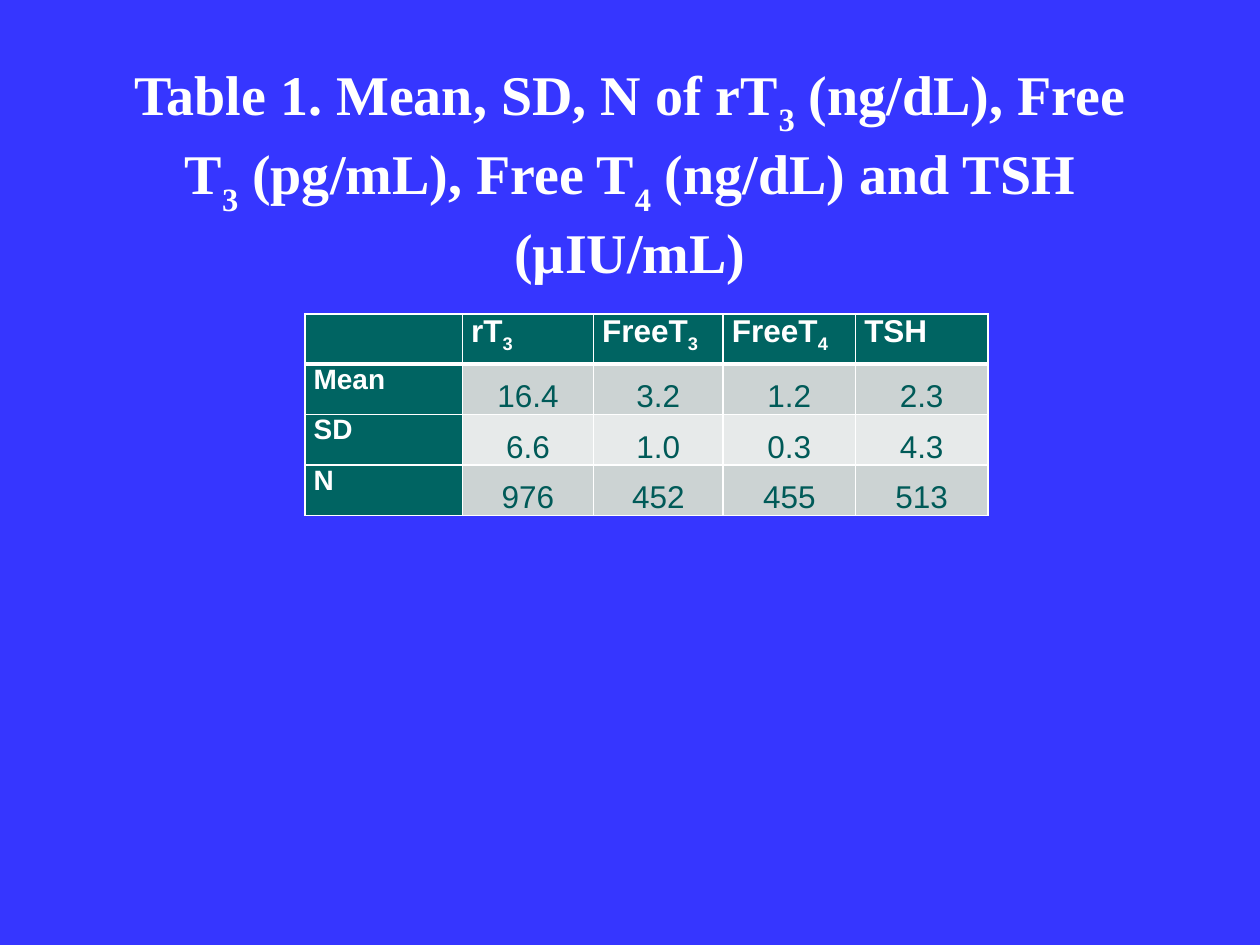
"""Build a slide with a titled summary table of thyroid hormone levels."""
from lxml import etree
from pptx import Presentation
from pptx.dml.color import RGBColor
from pptx.enum.text import MSO_ANCHOR, PP_ALIGN
from pptx.oxml.ns import qn
from pptx.util import Inches, Pt

CENTER, LEFT = PP_ALIGN.CENTER, PP_ALIGN.LEFT
TOP, MIDDLE, BOTTOM = MSO_ANCHOR.TOP, MSO_ANCHOR.MIDDLE, MSO_ANCHOR.BOTTOM

COLORS = {
    "background": "3636FF",
    "white": "FFFFFF",
    "header": "006462",
    "value": "005A58",
    "odd_row": "CCD3D3",
    "even_row": "E7EAEA",
}
TITLE = [
    ("Table 1. Mean, SD, N of rT", 0), ("3", -30),
    (" (ng/dL), Free T", 0), ("3", -30),
    (" (pg/mL), Free T", 0), ("4", -30),
    (" (ng/dL) and TSH (µIU/mL)", 0),
]
HEADERS = [
    [],
    [("rT", 0), ("3", -25)],
    [("FreeT", 0), ("3", -25)],
    [("FreeT", 0), ("4", -25)],
    [("TSH", 0)],
]
STATISTICS = [
    ("Mean", "16.4", "3.2", "1.2", "2.3"),
    ("SD", "6.6", "1.0", "0.3", "4.3"),
    ("N", "976", "452", "455", "513"),
]
COLUMN_WIDTHS = [1.25, 1.04, 1.03, 1.05, 1.05]
ROW_HEIGHT = 0.4


def rgb(name):
    return RGBColor.from_string(COLORS[name])


def add_runs(paragraph, runs, font_name, size, color, bold):
    for text, baseline in runs:
        run = paragraph.add_run()
        run.text = text
        run.font.name = font_name
        run.font.size = Pt(size)
        run.font.bold = bold
        run.font.color.rgb = rgb(color)
        if baseline:
            run.font._element.set("baseline", str(baseline * 1000))


def set_borders(cell, widths):
    properties = cell._tc.get_or_add_tcPr()
    for index, (side, width) in enumerate(zip("LRTB", widths)):
        line = etree.Element(qn(f"a:ln{side}"), w=str(Pt(width)))
        fill = etree.SubElement(line, qn("a:solidFill"))
        etree.SubElement(fill, qn("a:srgbClr"), val=COLORS["white"])
        properties.insert(index, line)


def add_title(slide):
    title = slide.shapes.add_textbox(Inches(0.75), Inches(1.25), Inches(8.5), Inches(1.25))
    frame = title.text_frame
    frame.word_wrap = True
    frame.vertical_anchor = MIDDLE
    frame.margin_bottom = Inches(1.07)
    paragraph = frame.paragraphs[0]
    paragraph.alignment = CENTER
    add_runs(paragraph, TITLE, "Times New Roman", 32, "white", True)


def add_statistics_table(slide):
    rows = [HEADERS] + [[[(text, 0)] for text in row] for row in STATISTICS]
    table = slide.shapes.add_table(
        len(rows), len(COLUMN_WIDTHS), Inches(2.42), Inches(2.49),
        Inches(sum(COLUMN_WIDTHS)), Inches(ROW_HEIGHT * len(rows)),
    ).table
    for column, width in zip(table.columns, COLUMN_WIDTHS):
        column.width = Inches(width)
    for row_index, row in enumerate(rows):
        table.rows[row_index].height = Inches(ROW_HEIGHT)
        for column_index, runs in enumerate(row):
            cell = table.cell(row_index, column_index)
            is_value = row_index > 0 and column_index > 0
            band = "odd_row" if row_index % 2 else "even_row"
            cell.fill.solid()
            cell.fill.fore_color.rgb = rgb(band if is_value else "header")
            cell.margin_left = cell.margin_right = Inches(0.07)
            cell.margin_top = cell.margin_bottom = 0
            cell.vertical_anchor = BOTTOM if is_value else TOP
            set_borders(cell, (1, 1, 3 if row_index == 1 else 1, 3 if row_index == 0 else 1))
            paragraph = cell.text_frame.paragraphs[0]
            paragraph.alignment = CENTER if is_value else LEFT
            size = 16 if row_index > 0 and column_index == 0 else 18
            add_runs(paragraph, runs, "Arial", size, "value" if is_value else "white", not is_value)


def main():
    presentation = Presentation()
    presentation.slide_width = Inches(10)
    presentation.slide_height = Inches(7.5)
    slide = presentation.slides.add_slide(presentation.slide_layouts[6])
    slide.background.fill.solid()
    slide.background.fill.fore_color.rgb = rgb("background")
    add_title(slide)
    add_statistics_table(slide)
    presentation.save("out.pptx")


if __name__ == "__main__":
    main()
